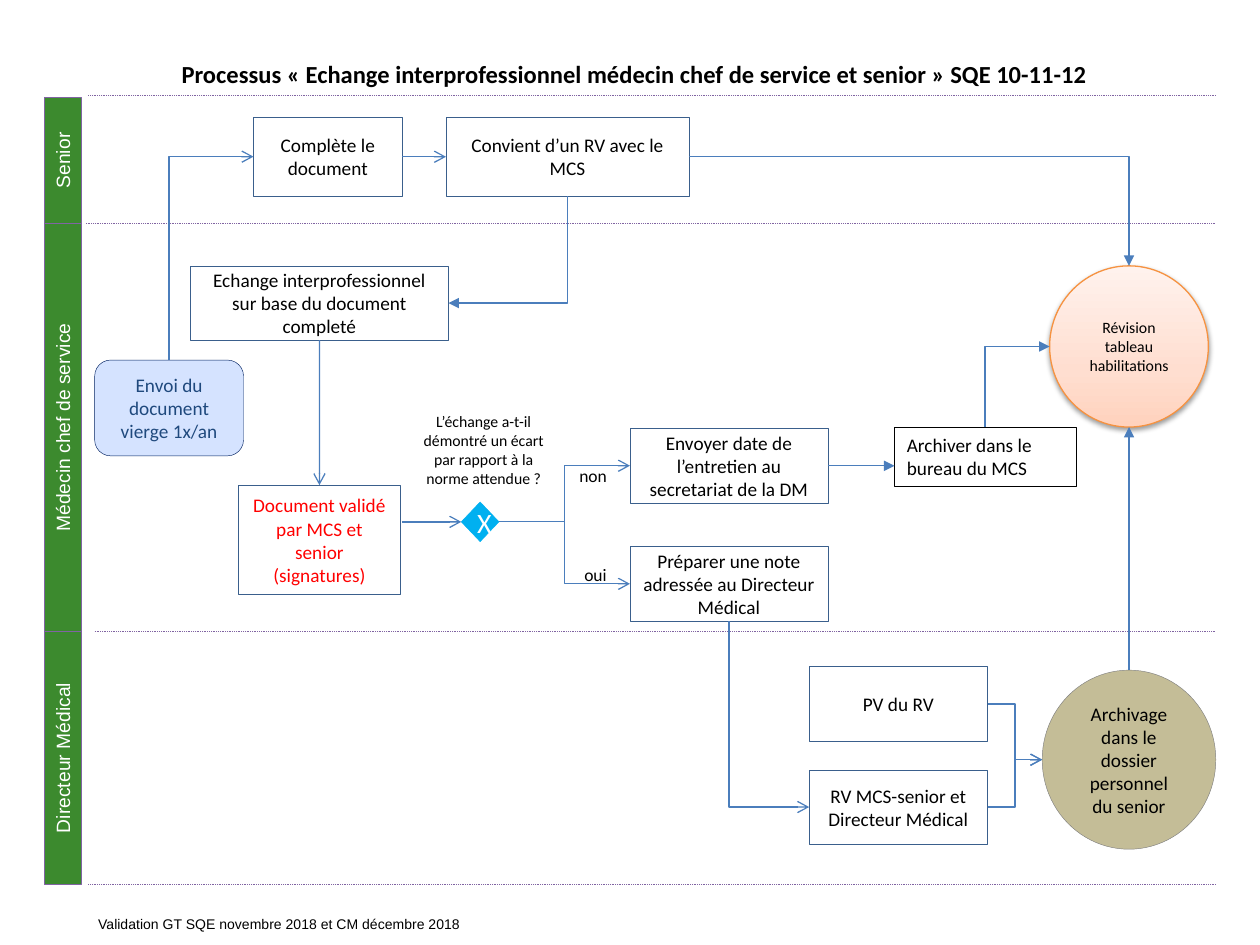
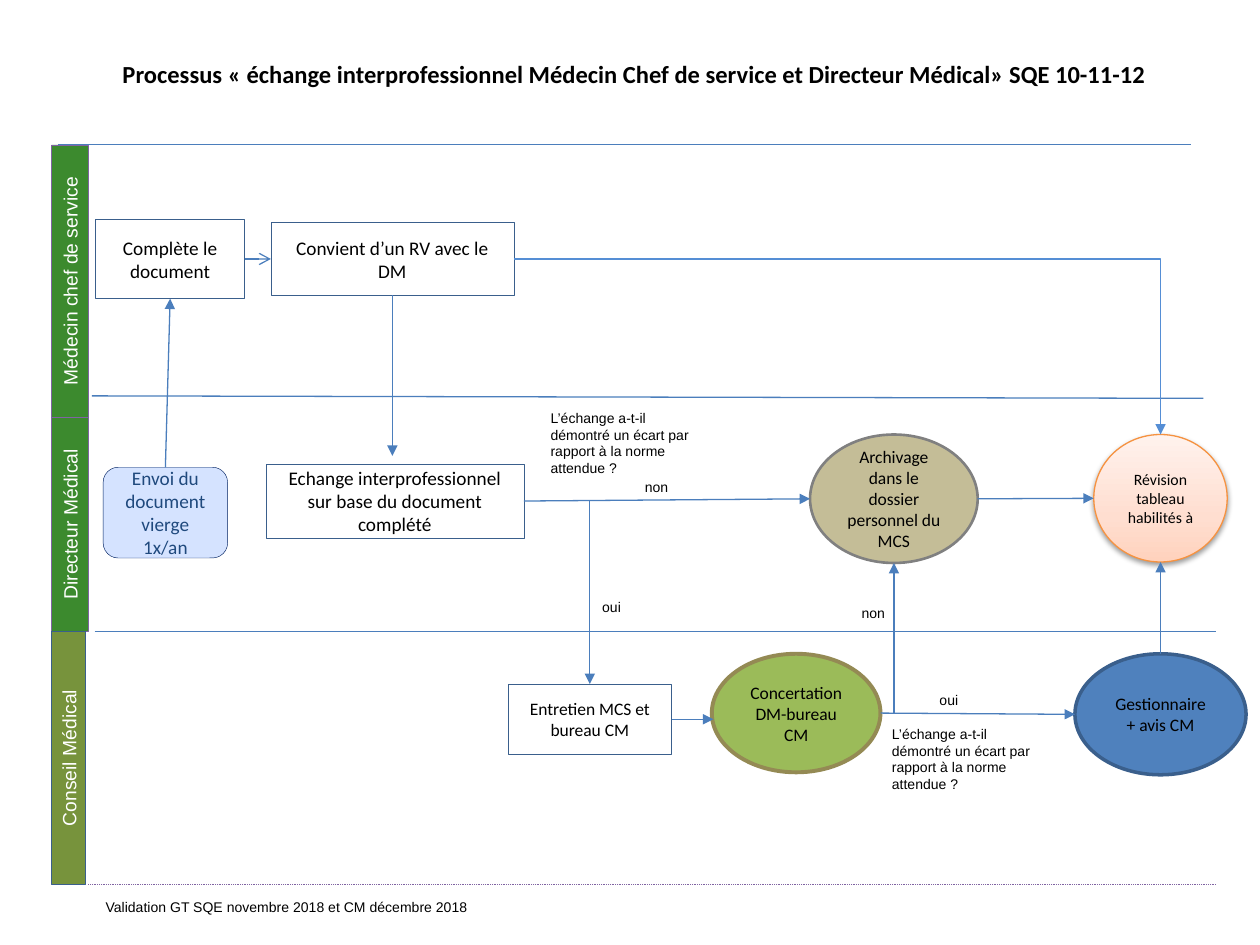
from copy import deepcopy
from dataclasses import dataclass

from lxml import etree
from pptx import Presentation
from pptx.dml.color import RGBColor
from pptx.enum.dml import MSO_LINE
from pptx.enum.shapes import MSO_CONNECTOR, MSO_SHAPE
from pptx.enum.text import MSO_ANCHOR, MSO_AUTO_SIZE, PP_ALIGN
from pptx.oxml.ns import qn
from pptx.util import Cm, Pt

RECT, ROUND = MSO_SHAPE.RECTANGLE, MSO_SHAPE.ROUNDED_RECTANGLE
OVAL, GATE = MSO_SHAPE.OVAL, MSO_SHAPE.FLOWCHART_DECISION
STRAIGHT, ELBOW = MSO_CONNECTOR.STRAIGHT, MSO_CONNECTOR.ELBOW
MIDDLE, FIXED = MSO_ANCHOR.MIDDLE, MSO_AUTO_SIZE.NONE
CENTER, START = PP_ALIGN.CENTER, PP_ALIGN.LEFT
DOTTED = MSO_LINE.ROUND_DOT
TOP, LEFT, BOTTOM, RIGHT = range(4)
TITLE_ONLY = 5


@dataclass(frozen=True)
class Theme:
    head: str = "Calibri"
    plain: str = "Arial"
    title: int = 14
    body: int = 11
    mid: int = 10
    small: int = 9
    tiny: int = 8
    black: str = "000000"
    white: str = "FFFFFF"
    red: str = "FF0000"
    navy: str = "1F497D"
    green: str = "3C8A2E"
    olive: str = "77933C"
    violet: str = "8064A2"
    edge: str = "3A5F8C"
    link: str = "4B7EBC"
    sky: str = "558ED5"
    pale: str = "D5E3FF"
    deep: str = "002060"
    cyan: str = "00B0F0"
    sand: str = "C4BD97"
    grey: str = "808080"
    lime: str = "9BBB59"
    khaki: str = "948A54"
    blue: str = "4F81BD"
    orange: str = "F69240"
    glow: tuple = ((0, "FFD2BD"), (0.35, "FFDED0"), (1, "FFF2ED"))


T = Theme()
QUERY = "L’échange a-t-il démontré un écart par rapport à la norme attendue ?"
SEND = "Envoi du document vierge 1x/an"
FILL = "Complète le document"
STAMP = "Validation GT SQE novembre 2018 et CM décembre 2018"


def rgb(code):
    return RGBColor.from_string(code)


def write(frame, text, size, color=T.black, font=T.head, align=CENTER, bold=False):
    frame.text = text
    para = frame.paragraphs[0]
    para.alignment = align
    para.font.name, para.font.size, para.font.bold = font, Pt(size), bold
    para.font.color.rgb = rgb(color)


def add(parent, tag, **attrs):
    return etree.SubElement(parent, qn(tag), attrs)


def shine(shape):
    """Give the shape its three-stop gradient and soft shadow."""
    shape.fill.gradient()
    shape.fill.gradient_angle = 90
    props = shape._element.spPr
    stops = props.find(".//" + qn("a:gsLst"))
    stops.insert(1, deepcopy(stops[0]))
    for stop, (place, color) in zip(shape.fill.gradient_stops, T.glow):
        stop.position = place
        stop.color.rgb = rgb(color)
    cast = add(props.find(qn("a:effectLst")), "a:outerShdw", blurRad="39370",
               dist="20320", dir="5400000", rotWithShape="0")
    add(add(cast, "a:srgbClr", val=T.black), "a:alpha", val="38000")


def turn(line, upright):
    """Make an elbow with one corner, leaving upright or level."""
    props = line._element.spPr
    props.find(qn("a:prstGeom")).set("prst", "bentConnector2")
    if not upright:
        return
    dx, dy = line.end_x - line.begin_x, line.end_y - line.begin_y
    mid_x, mid_y = line.begin_x + dx // 2, line.begin_y + dy // 2
    line.width, line.height = abs(dy), abs(dx)
    line.left, line.top = mid_x - line.width // 2, mid_y - line.height // 2
    quarter = 270 if dx > 0 and dy > 0 else 90
    flip_h = (dy < 0) if quarter == 90 else True
    flip_v = dx > 0 and quarter == 90
    frame = props.find(qn("a:xfrm"))
    frame.set("rot", str(quarter * 60000))
    frame.set("flipH", str(int(flip_h)))
    frame.set("flipV", str(int(flip_v)))


class Pane:
    """A region of a slide; its parts are placed in cm from its corner."""

    def __init__(self, slide, x, y):
        self.shapes, self.x, self.y = slide.shapes, x, y

    def spot(self, x, y):
        return Cm(self.x + x), Cm(self.y + y)

    def node(self, box, text, kind=RECT, size=T.body, ink=T.black, fill=None,
             edge=T.edge, width=0.25, font=T.head):
        x, y, w, h = box
        shape = self.shapes.add_shape(kind, *self.spot(x, y), Cm(w), Cm(h))
        shape.shadow.inherit = False
        if fill == T.glow:
            shine(shape)
        elif fill:
            shape.fill.solid()
            shape.fill.fore_color.rgb = rgb(fill)
        else:
            shape.fill.background()
        shape.line.color.rgb = rgb(edge)
        shape.line.width = Pt(width)
        write(shape.text_frame, text, size, ink, font)
        return shape

    def label(self, box, text, size=T.tiny, font=T.plain, align=START, wrap=True):
        x, y, w, h = box
        frame = self.shapes.add_textbox(*self.spot(x, y), Cm(w), Cm(h)).text_frame
        frame.word_wrap = wrap
        write(frame, text, size, font=font, align=align)

    def line(self, start, end, kind=STRAIGHT, color=T.link, width=0.75, dash=None):
        line = self.shapes.add_connector(kind, *self.spot(*start), *self.spot(*end))
        line.line.color.rgb = rgb(color)
        line.line.width = Pt(width)
        if dash:
            line.line.dash_style = dash
        add(line._element.spPr, "a:effectLst")
        return line

    def dots(self, x, y):
        self.line((x, y), (22.73, y), color=T.violet, width=0.5, dash=DOTTED)

    def link(self, start, end, head="triangle", kind=STRAIGHT, corner=False,
             color=T.link):
        """Draw an arrow; each end is a (shape, side) pair or an (x, y) point."""
        fixed = [isinstance(spot[0], (int, float)) for spot in (start, end)]
        first, last = (spot if free else (0, 0)
                       for spot, free in zip((start, end), fixed))
        line = self.line(first, last, ELBOW if corner else kind, color)
        joins = (line.begin_connect, line.end_connect)
        for spot, free, join, tag in zip((start, end), fixed, joins,
                                         ("a:stCxn", "a:endCxn")):
            if free:
                continue
            shape, side = spot
            join(shape, side)
            if shape.auto_shape_type == OVAL:  # ovals have eight sites
                line._element.find(".//" + qn(tag)).set("idx", str(2 * side))
        if corner:
            turn(line, start[1] in (TOP, BOTTOM))
        add(line._element.spPr.find(qn("a:ln")), "a:tailEnd", type=head)


def lanes(slide, x, y, rows):
    """Stack the upright lane headings from the given corner."""
    pane, top = Pane(slide, x, y), 0
    for name, height, width, fill, edge in rows:
        band = pane.node((0, top, width, height), name, fill=fill, edge=edge,
                         ink=T.white, font=T.plain)
        band.text_frame._txBody.bodyPr.set("vert", "vert270")
        top += height


def start_slide(deck, title, foot):
    slide = deck.slides.add_slide(deck.slide_layouts[TITLE_ONLY])
    head = slide.shapes.title
    head.left, head.top, head.width, head.height = Cm(1.07), Cm(1.04), Cm(23.44), Cm(0.89)
    write(head.text_frame, title, T.title, bold=True)
    head.text_frame.vertical_anchor = MIDDLE
    head.text_frame.auto_size = FIXED
    Pane(slide, *foot).label((0, 0, 16.3, 0.6), STAMP)
    return slide


def senior_flow(slide, x, y):
    pane = Pane(slide, x, y)
    for left, top in ((0, -0.03), (-0.05, 2.54), (0.13, 10.77), (0, 15.87)):
        pane.dots(left, top)

    send = pane.node((0.13, 5.3, 3, 1.93), SEND, ROUND, ink=T.navy, fill=T.pale, edge=T.deep)
    fill = pane.node((3.33, 0.4, 3, 1.6), FILL)
    meet = pane.node((7.21, 0.4, 4.9, 1.6), "Convient d’un RV avec le MCS")
    talk = pane.node((2.06, 3.4, 5.2, 1.5),
                     "Echange interprofessionnel sur base du document completé")
    sign = pane.node((3.03, 7.82, 3.26, 2.21),
                     "Document validé par MCS et senior (signatures)", ink=T.red)
    gate = pane.node((7.52, 8.16, 0.76, 0.8), "X", GATE, 16, T.white, T.cyan, T.cyan)
    mail = pane.node((10.92, 6.68, 3.99, 1.5),
                     "Envoyer date de l’entretien au secretariat de la DM")
    note = pane.node((10.92, 9.06, 3.99, 1.5),
                     "Préparer une note adressée au Directeur Médical")
    report = pane.node((14.53, 11.48, 3.6, 1.5), "PV du RV")
    visit = pane.node((14.53, 13.56, 3.6, 1.5), "RV MCS-senior et Directeur Médical")
    store = pane.node((19.23, 11.55, 3.5, 3.61),
                      "Archivage dans le dossier personnel du senior", OVAL,
                      fill=T.sand, edge=T.grey)
    desk = pane.node((16.25, 6.65, 3.66, 1.19), "Archiver dans le bureau du MCS",
                     edge=T.black)
    desk.text_frame.paragraphs[0].alignment = START
    table = pane.node((19.38, 3.4, 3.2, 3.25), "Révision tableau habilitations",
                      OVAL, T.small, fill=T.glow, edge=T.orange, width=0.75)

    pane.label((6.37, 6.22, 3.2, 1.8), QUERY, T.small, T.head, CENTER)
    pane.label((9.65, 7.29, 1.07, 0.69), "non", T.mid, T.head, wrap=False)
    pane.label((9.75, 9.29, 0.97, 0.69), "oui", T.mid, T.head, wrap=False)

    pane.link((send, TOP), (fill, LEFT), "arrow", corner=True)
    pane.link((fill, RIGHT), (meet, LEFT), "arrow")
    pane.link((meet, BOTTOM), (talk, RIGHT), corner=True)
    pane.link((meet, RIGHT), (table, TOP), corner=True)
    pane.link((talk, BOTTOM), (sign, TOP), "arrow")
    pane.link((6.32, 8.56), (gate, LEFT), "arrow")
    for step in (mail, note):
        pane.link((gate, RIGHT), (step, LEFT), "arrow", ELBOW)
    pane.link((mail, RIGHT), (16.25, 7.43))
    pane.link((desk, TOP), (table, LEFT), corner=True)
    pane.link((note, BOTTOM), (visit, LEFT), "arrow", corner=True)
    for step in (report, visit):
        pane.link((step, RIGHT), (store, LEFT), "arrow", ELBOW)
    pane.link((store, TOP), (table, BOTTOM))


def chief_flow(slide, x, y):
    pane = Pane(slide, x, y)
    for start, end in (((-0.61, 0), (22.22, 0)), ((0.07, 5.06), (22.48, 5.11)),
                       ((0.13, 9.81), (22.73, 9.81))):
        pane.line(start, end)
    pane.dots(0, 14.91)

    send = pane.node((0.3, 6.5, 2.51, 1.83), SEND, ROUND, ink=T.navy, fill=T.pale, edge=T.deep)
    fill = pane.node((0.15, 1.5, 3, 1.6), FILL)
    meet = pane.node((3.68, 1.57, 4.9, 1.46), "Convient d’un RV avec le DM")
    talk = pane.node((3.58, 6.43, 5.2, 1.5),
                     "Echange interprofessionnel sur base du document complété")
    store = pane.node((14.55, 5.84, 3.38, 2.59),
                      "Archivage dans le dossier personnel du MCS", OVAL, T.mid,
                      fill=T.sand, edge=T.grey, width=1.5)
    table = pane.node((20.27, 5.84, 2.69, 2.57), "Révision tableau habilités à",
                      OVAL, T.small, fill=T.glow, edge=T.orange, width=0.75)
    board = pane.node((8.46, 10.87, 3.3, 1.42), "Entretien MCS et bureau CM", size=T.mid)
    council = pane.node((12.57, 10.26, 3.4, 2.39), "Concertation DM-bureau CM",
                        OVAL, T.mid, fill=T.lime, edge=T.khaki, width=2.25)
    clerk = pane.node((19.89, 10.26, 3.45, 2.44), "Gestionnaire + avis CM",
                      OVAL, T.mid, fill=T.blue, width=2)

    pane.label((9.07, 5.21, 3.43, 1.63), QUERY)
    pane.label((15.95, 11.58, 3.38, 1.63), QUERY)
    for left, top, text in ((10.97, 6.61, "non"), (10.11, 9.02, "oui"),
                            (15.34, 9.15, "non"), (16.91, 10.9, "oui")):
        pane.label((left, top, 1, 0.61), text, wrap=False)

    pane.link((send, TOP), (fill, BOTTOM))
    pane.link((fill, RIGHT), (meet, LEFT), "arrow")
    pane.link((meet, BOTTOM), (6.13, 6.27))
    pane.link((meet, RIGHT), (table, TOP), corner=True, color=T.sky)
    pane.link((talk, RIGHT), (store, LEFT))
    pane.link((10.11, 7.18), (board, TOP))
    pane.link((store, RIGHT), (table, LEFT))
    pane.link((board, RIGHT), (12.6, 11.58))
    pane.link((council, RIGHT), (clerk, LEFT))
    pane.link((16.24, 11.46), (store, BOTTOM))
    pane.link((clerk, TOP), (table, BOTTOM))


def main():
    deck = Presentation()
    deck.slide_width, deck.slide_height = Cm(25.4), Cm(19.05)
    green = (0.74, T.green, T.violet)

    slide = start_slide(deck, "Processus « Echange interprofessionnel médecin chef "
                        "de service et senior » SQE 10-11-12", (1.73, 18.34))
    lanes(slide, 0.89, 1.96, (("Senior", 2.55, *green),
                              ("Médecin chef de service", 8.22, *green),
                              ("Directeur Médical", 5.1, *green)))
    senior_flow(slide, 1.78, 1.96)

    slide = start_slide(deck, "Processus « échange interprofessionnel Médecin Chef "
                        "de service et Directeur Médical» SQE 10-11-12", (1.88, 17.98))
    lanes(slide, 1.04, 2.92, (("Médecin chef de service", 5.49, *green),
                              ("Directeur Médical", 4.32, *green),
                              ("Conseil Médical", 5.1, 0.69, T.olive, T.edge)))
    chief_flow(slide, 1.78, 2.92)
    deck.save("out.pptx")


if __name__ == "__main__":
    main()
